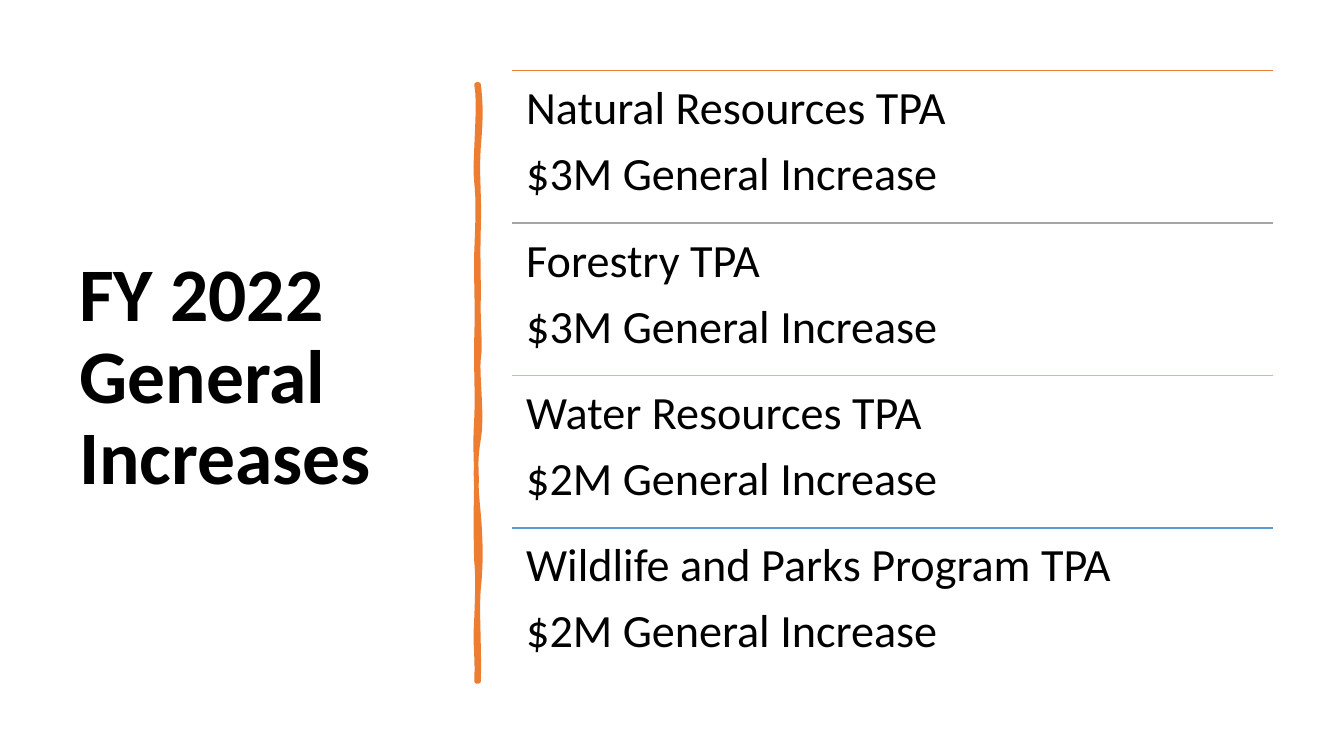
"""Build the FY 2022 general increases slide."""
from dataclasses import dataclass

from lxml import etree
from pptx import Presentation
from pptx import util as u
from pptx.dml.color import RGBColor
from pptx.enum import shapes, text
from pptx.oxml import ns

Point = tuple[float, float]


@dataclass(frozen=True)
class Theme:
    """Colours, font and type sizes."""
    font: str = "Calibri"
    ink: str = "000000"
    orange: str = "ED7D31"
    grey: str = "A5A5A5"
    gold: str = "FFC000"
    blue: str = "5B9BD5"
    title_size: float = 54
    body_size: float = 33
    body_gap: float = 11.5
    rule_width: float = 1
    stroke_width: float = 3.25


@dataclass(frozen=True)
class Increase:
    """One program and its increase."""
    program: str
    amount: str
    color: str


THEME = Theme()
INCREASES = (
    Increase("Natural Resources TPA", "$3M General Increase", THEME.orange),
    Increase("Forestry TPA", "$3M General Increase", THEME.grey),
    Increase("Water Resources TPA", "$2M General Increase", THEME.gold),
    Increase("Wildlife and Parks Program TPA", "$2M General Increase", THEME.blue),
)
LIST_LEFT, LIST_TOP, LIST_WIDTH, ROW_HEIGHT = 12.9, 1.78, 19.18, 3.84

RIGHT_EDGE: list[Point] = [
    (12.06, 2.13),
    (12.12, 2.59), (12.12, 3.02), (12.06, 3.71),
    (12.01, 4.39), (12.09, 4.95), (12.06, 5.74),
    (12.04, 6.53), (12.06, 6.65), (12.06, 7.47),
    (12.04, 8.26), (12.12, 8.69), (12.06, 9.04),
    (12.01, 9.4), (12.17, 10.52), (12.06, 11.07),
    (11.96, 11.61), (11.99, 12.29), (12.06, 12.95),
    (12.12, 13.61), (12.12, 14.33), (12.06, 14.83),
    (12.01, 15.32), (12.09, 16.51), (12.06, 17.17),
]
LEFT_EDGE: list[Point] = [
    (12.01, 17.17),
    (12.04, 16.41), (11.96, 16.36), (12.01, 15.57),
    (12.04, 14.81), (12.04, 14.48), (12.01, 14.15),
    (11.99, 13.82), (11.99, 12.57), (12.01, 12.12),
    (12.01, 11.66), (11.96, 11.3), (12.01, 10.54),
    (12.04, 9.8), (11.99, 9.47), (12.01, 8.51),
    (12.04, 7.57), (11.99, 7.14), (12.01, 6.35),
    (12.04, 5.54), (12.06, 5.08), (12.01, 4.6),
    (11.94, 4.14), (12.12, 2.64), (12.01, 2.13),
]


def smooth(controls: list[Point], steps: int = 8) -> list[Point]:
    """Return points along a chain of cubic curves."""
    points = [controls[0]]
    for start in range(0, len(controls) - 1, 3):
        curve = controls[start:start + 4]
        for step in range(1, steps + 1):
            t = step / steps
            weights = ((1 - t) ** 3, 3 * t * (1 - t) ** 2, 3 * t * t * (1 - t), t ** 3)
            x, y = (sum(w * p[axis] for w, p in zip(weights, curve)) for axis in (0, 1))
            points.append((x, y))
    return points


def add_brush_stroke(page) -> None:
    """Draw the wavy vertical divider."""
    outline = [(u.Cm(x), u.Cm(y)) for x, y in smooth(RIGHT_EDGE) + smooth(LEFT_EDGE)]
    builder = page.shapes.build_freeform(*outline[0])
    builder.add_line_segments(outline[1:], close=True)
    stroke = builder.convert_to_shape()
    stroke.shadow.inherit = False
    color = RGBColor.from_string(THEME.orange)
    stroke.fill.solid()
    stroke.fill.fore_color.rgb = color
    stroke.line.color.rgb = color
    stroke.line.width = u.Pt(THEME.stroke_width)


def add_rule(page, top: float, color: str) -> None:
    """Draw a horizontal rule above a row."""
    y = u.Cm(top)
    rule = page.shapes.add_connector(
        shapes.MSO_CONNECTOR.STRAIGHT,
        u.Cm(LIST_LEFT), y, u.Cm(LIST_LEFT + LIST_WIDTH), y)
    rule.line.color.rgb = RGBColor.from_string(color)
    rule.line.width = u.Pt(THEME.rule_width)
    etree.SubElement(rule._element.spPr, ns.qn("a:effectLst"))


def add_text(page, lines: tuple[str, ...], *, left: float, top: float, width: float,
             height: float, size: float, bold: bool = False, gap: float = 0,
             inset_x: float = 0.25, inset_y: float = 0.13,
             anchor=text.MSO_ANCHOR.TOP) -> None:
    """Add a wrapped text box with one paragraph per line."""
    box = page.shapes.add_textbox(u.Cm(left), u.Cm(top), u.Cm(width), u.Cm(height))
    frame = box.text_frame
    frame.word_wrap = True
    frame.vertical_anchor = anchor
    frame.margin_left = frame.margin_right = u.Cm(inset_x)
    frame.margin_top = frame.margin_bottom = u.Cm(inset_y)
    for index, line in enumerate(lines):
        para = frame.add_paragraph() if index else frame.paragraphs[0]
        para.line_spacing = 0.9
        para.space_after = u.Pt(gap)
        span = para.add_run()
        span.text = line
        span.font.name = THEME.font
        span.font.size = u.Pt(size)
        span.font.bold = bold
        span.font.color.rgb = RGBColor.from_string(THEME.ink)


def main() -> None:
    """Create and save the deck."""
    deck = Presentation()
    deck.slide_width, deck.slide_height = u.Cm(33.87), u.Cm(19.05)
    page = deck.slides.add_slide(deck.slide_layouts[6])
    add_text(page, ("FY 2022 General Increases",), left=1.75, top=1.78, width=9.5,
             height=15.52, size=THEME.title_size, bold=True,
             anchor=text.MSO_ANCHOR.MIDDLE)
    add_brush_stroke(page)
    for row, increase in enumerate(INCREASES):
        top = LIST_TOP + row * ROW_HEIGHT
        add_rule(page, top, increase.color)
        add_text(page, (increase.program, increase.amount), left=LIST_LEFT, top=top,
                 width=LIST_WIDTH, height=ROW_HEIGHT, size=THEME.body_size,
                 gap=THEME.body_gap, inset_x=0.36, inset_y=0.36)
    deck.save("out.pptx")


if __name__ == "__main__":
    main()
